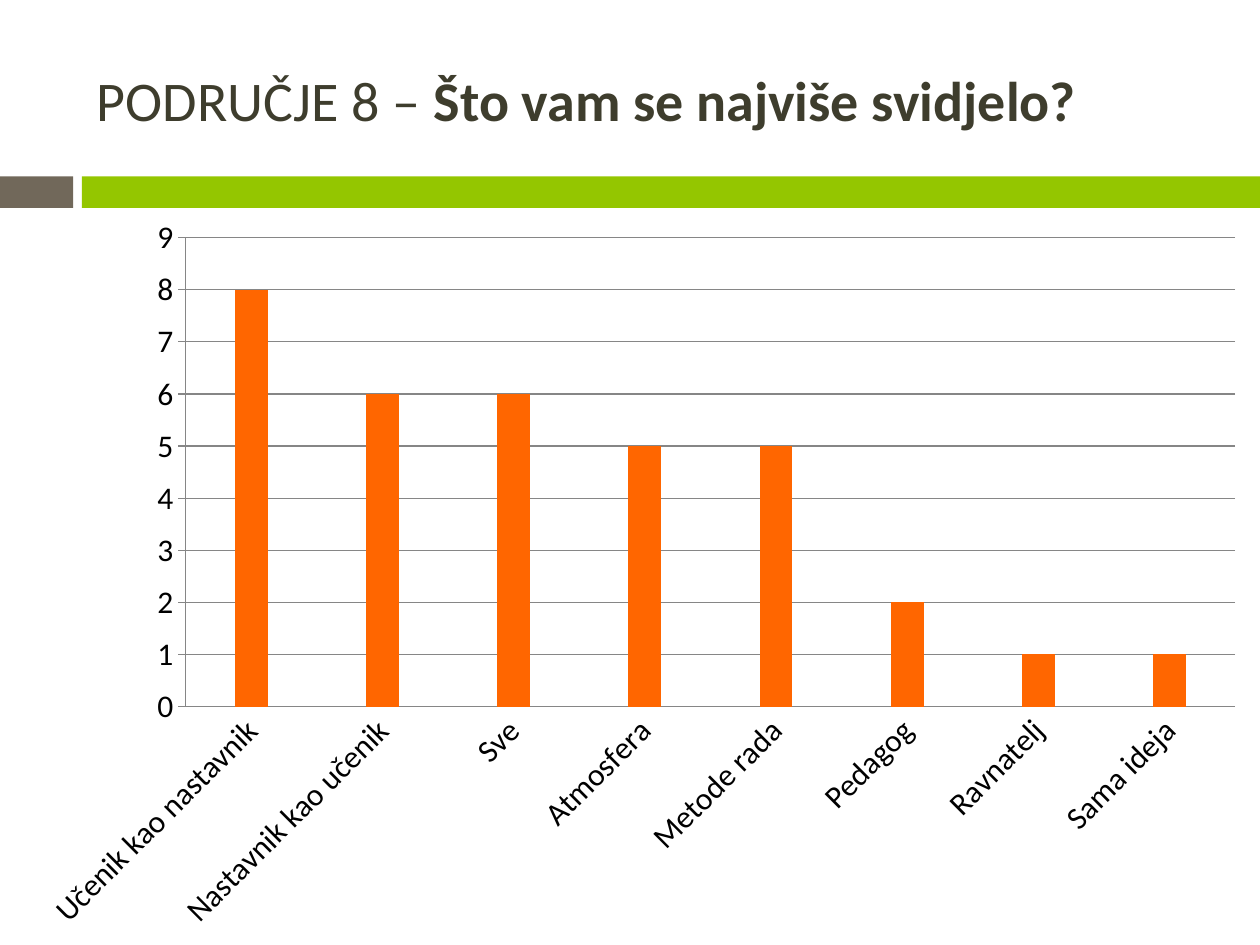
from lxml import etree
from pptx import Presentation
from pptx.chart.data import CategoryChartData
from pptx.dml.color import RGBColor
from pptx.enum.chart import XL_CHART_TYPE, XL_TICK_MARK
from pptx.enum.shapes import MSO_SHAPE
from pptx.enum.text import MSO_ANCHOR
from pptx.oxml.ns import qn
from pptx.util import Inches, Pt

COLUMN = XL_CHART_TYPE.COLUMN_CLUSTERED
NONE, OUT = XL_TICK_MARK.NONE, XL_TICK_MARK.OUTSIDE
RECT = MSO_SHAPE.RECTANGLE
MIDDLE = MSO_ANCHOR.MIDDLE

TITLE = [("PODRUČJE 8 – ", False), ("Što vam se najviše svidjelo?", True)]
VOTES = [
    ("Učenik kao nastavnik", 8),
    ("Nastavnik kao učenik", 6),
    ("Sve", 6),
    ("Atmosfera", 5),
    ("Metode rada", 5),
    ("Pedagog", 2),
    ("Ravnatelj", 1),
    ("Sama ideja", 1),
]
BANDS = [("gray", 0, 0.58), ("green", 0.65, 9.35)]  # colour, left, width
PLOT = {"x": 0.13, "y": 0.05, "w": 0.85, "h": 0.63}  # shares of the chart

THEME = {
    "font": "Calibri", "title_size": 32, "chart_size": 18,
    "gray": "71685A", "green": "94C600", "title": "3E3D2D",
    "bar": "FF6600", "label": "000000", "line": "868686",
}


def color(name):
    return RGBColor.from_string(THEME[name])


def box(*sides):
    return [Inches(side) for side in sides]


def set_font(font, size, tint):
    font.name = THEME["font"]
    font.size = Pt(THEME[size])
    font.color.rgb = color(tint)


def add_bands(slide):
    for tint, left, width in BANDS:
        band = slide.shapes.add_shape(RECT, *box(left, 1.4, width, 0.25))
        band.shadow.inherit = False
        band.fill.solid()
        band.fill.fore_color.rgb = color(tint)
        band.line.fill.background()


def add_title(slide):
    frame = slide.shapes.add_textbox(*box(0.67, 0.25, 8.92, 1.08)).text_frame
    frame.word_wrap = True
    frame.vertical_anchor = MIDDLE
    para = frame.paragraphs[0]
    set_font(para.font, "title_size", "title")
    for text, bold in TITLE:
        run = para.add_run()
        run.text = text
        run.font.bold = bold


def place_plot(chart):
    """Fix the inner plot area, which python-pptx cannot set."""
    area = chart._chartSpace.chart.plotArea
    for old in area.findall(qn("c:layout")):
        area.remove(old)
    layout = etree.Element(qn("c:layout"))
    area.insert(0, layout)
    manual = etree.SubElement(layout, qn("c:manualLayout"))
    rules = [("layoutTarget", "inner"), ("xMode", "edge"), ("yMode", "edge")]
    for tag, value in rules + list(PLOT.items()):
        etree.SubElement(manual, qn("c:" + tag)).set("val", str(value))


def add_votes(slide):
    data = CategoryChartData()
    data.categories = [name for name, _ in VOTES]
    data.add_series("Series 1", [count for _, count in VOTES])
    spot = box(0.2, 1.59, 9.8, 5.91)
    chart = slide.shapes.add_chart(COLUMN, *spot, data).chart
    chart.has_legend = False
    chart.has_title = False
    set_font(chart.font, "chart_size", "label")

    plot = chart.plots[0]
    plot.gap_width, plot.overlap = 300, 76
    plot.vary_by_categories = False
    fill = plot.series[0].format.fill
    fill.solid()
    fill.fore_color.rgb = color("bar")

    cats, vals = chart.category_axis, chart.value_axis
    cats.major_tick_mark, vals.major_tick_mark = NONE, OUT
    vals.minimum_scale, vals.maximum_scale, vals.major_unit = 0, 9, 1
    for part in (cats, vals, vals.major_gridlines):
        part.format.line.color.rgb = color("line")
        part.format.line.width = Pt(0.75)
    set_font(cats.tick_labels.font, "chart_size", "label")
    body = cats._element.find(qn("c:txPr")).find(qn("a:bodyPr"))
    body.set("rot", str(-45 * 60000))
    body.set("vert", "horz")
    place_plot(chart)


def main():
    deck = Presentation()
    deck.slide_width, deck.slide_height = box(10, 7.5)
    slide = deck.slides.add_slide(deck.slide_layouts[6])
    add_bands(slide)
    add_title(slide)
    add_votes(slide)
    deck.save("out.pptx")


if __name__ == "__main__":
    main()
